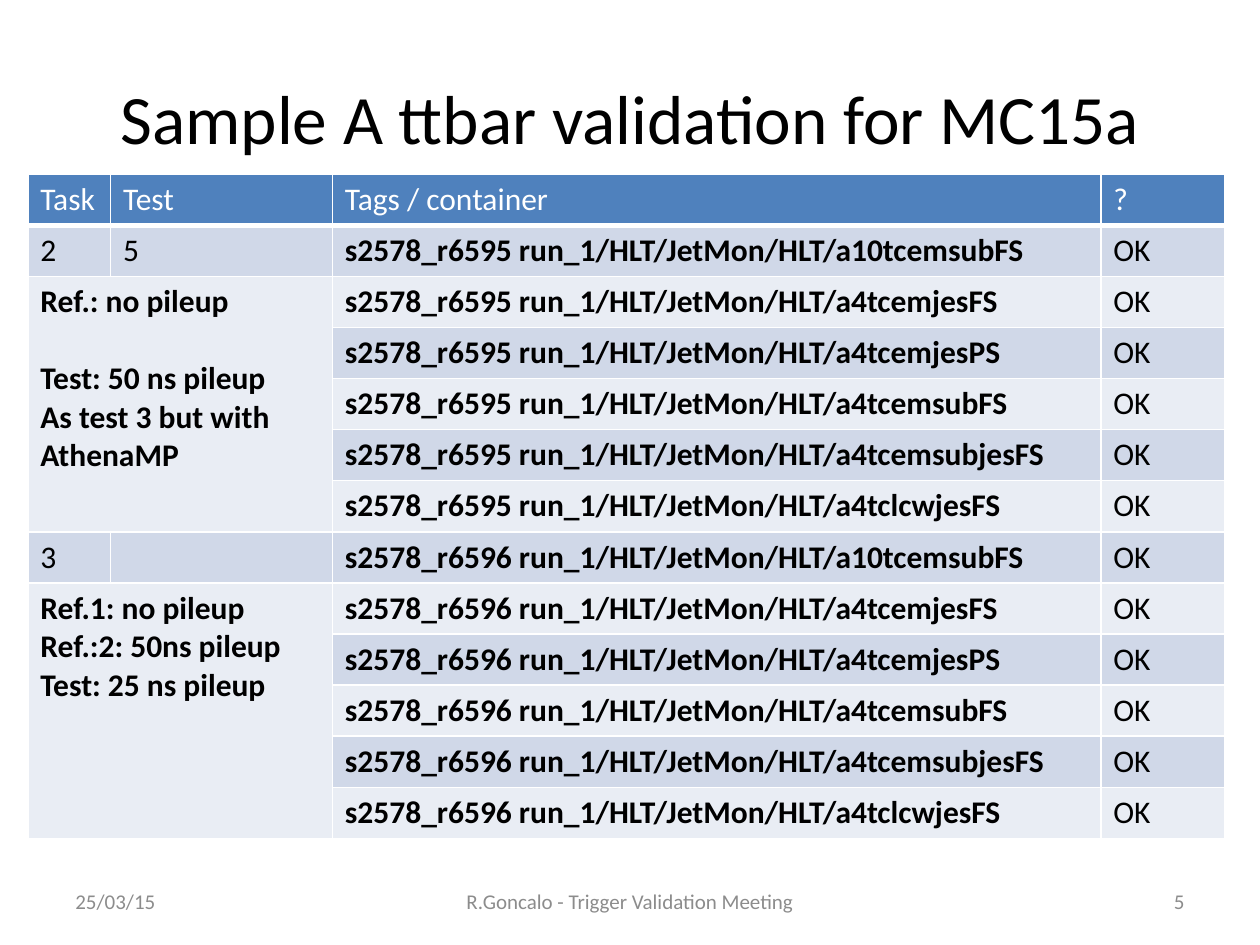
from lxml.etree import SubElement as Sub
from pptx import Presentation
from pptx.dml.color import RGBColor as Rgb
from pptx.enum.text import MSO_ANCHOR as Anchor, PP_ALIGN as Align
from pptx.oxml.ns import qn
from pptx.util import Cm, Pt

BLACK = Rgb(0x00, 0x00, 0x00)
WHITE = Rgb(0xFF, 0xFF, 0xFF)
GREY = Rgb(0x8C, 0x8C, 0x8C)
BLUE = Rgb(0x4F, 0x81, 0xBD)
DARK = Rgb(0xD0, 0xD8, 0xE8)
LIGHT = Rgb(0xE9, 0xED, 0xF4)

FONT = "Calibri"
HEADS = ["Task", "Test", "Tags / container", "?"]
WIDTHS = [1.67, 4.47, 15.49, 2.5]
TALL = 1.03
PATH = "run_1/HLT/JetMon/HLT/"
TESTS = ["a10tcemsubFS", "a4tcemjesFS", "a4tcemjesPS",
         "a4tcemsubFS", "a4tcemsubjesFS", "a4tclcwjesFS"]
TASKS = [
    ("2", "5", "s2578_r6595",
     ["Ref.: no pileup", "Test: 50 ns pileup", "As test 3 but with AthenaMP"], {1: 22}),
    ("3", "", "s2578_r6596",
     ["Ref.1: no pileup", "Ref.:2: 50ns pileup", "Test: 25 ns pileup"], {}),
]


def apply(item, form):
    for name, value in form.items():
        setattr(item, name, value)


def write(frame, lines, size, color, bold=False, align=Align.LEFT, gaps={}):
    for i, line in enumerate(lines):
        para = frame.paragraphs[0] if i == 0 else frame.add_paragraph()
        apply(para, {"alignment": align, "space_before": Pt(gaps.get(i, 0))})
        run = para.add_run()
        run.text = line
        apply(run.font, {"name": FONT, "size": Pt(size), "bold": bold})
        run.font.color.rgb = color


def add_text(slide, box, text, size, color, align):
    frame = slide.shapes.add_textbox(*map(Cm, box)).text_frame
    apply(frame, {"word_wrap": True, "vertical_anchor": Anchor.MIDDLE})
    write(frame, [text], size, color, align=align)


def style(cell, color, base=1):
    props = cell._tc.get_or_add_tcPr()
    for side, width in {"L": 1, "R": 1, "T": 1, "B": base}.items():
        line = Sub(props, qn(f"a:ln{side}"), w=str(Pt(width)))
        Sub(Sub(line, qn("a:solidFill")), qn("a:srgbClr"), val=str(WHITE))
    cell.fill.solid()
    cell.fill.fore_color.rgb = color


def put(cell, text, color=BLACK, bold=False):
    if text:
        write(cell.text_frame, [text], 18, color, bold)


def add_task(grid, top, task):
    num, test, tag, notes, gaps = task
    put(grid.cell(top, 0), num)
    put(grid.cell(top, 1), test)
    for row, name in enumerate(TESTS, top):
        put(grid.cell(row, 2), f"{tag} {PATH}{name}", bold=True)
        put(grid.cell(row, 3), "OK")
    note = grid.cell(top + 1, 0)
    note.merge(grid.cell(top + len(TESTS) - 1, 1))
    write(note.text_frame, notes, 18, BLACK, True, gaps=gaps)


def add_grid(slide):
    count = 1 + len(TASKS) * len(TESTS)
    box = [0.56, 3.51, sum(WIDTHS), TALL * count]
    grid = slide.shapes.add_table(count, len(HEADS), *map(Cm, box)).table
    for col, width in zip(grid.columns, WIDTHS):
        col.width = Cm(width)
    for i, row in enumerate(grid.rows):
        row.height = Cm(TALL)
        for cell in row.cells:
            if i == 0:
                style(cell, BLUE, 3)
            else:
                style(cell, DARK if i % 2 else LIGHT)
    for i, head in enumerate(HEADS):
        put(grid.cell(0, i), head, WHITE)
    for i, task in enumerate(TASKS):
        add_task(grid, 1 + i * len(TESTS), task)


def main():
    """Build the validation slide and save it."""
    deck = Presentation()
    apply(deck, {"slide_width": Cm(25.4), "slide_height": Cm(19.05)})
    slide = deck.slides.add_slide(deck.slide_layouts[6])
    add_text(slide, (1.27, 0.76, 22.86, 3.18),
             "Sample A ttbar validation for MC15a", 39.6, BLACK, Align.CENTER)
    add_grid(slide)
    for left, width, text, align in [
        (1.27, 5.93, "25/03/15", Align.LEFT),
        (8.68, 8.04, "R.Goncalo - Trigger Validation Meeting", Align.CENTER),
        (18.2, 5.93, "5", Align.RIGHT),
    ]:
        add_text(slide, (left, 17.66, width, 1.01), text, 12, GREY, align)
    deck.save("out.pptx")


if __name__ == "__main__":
    main()
